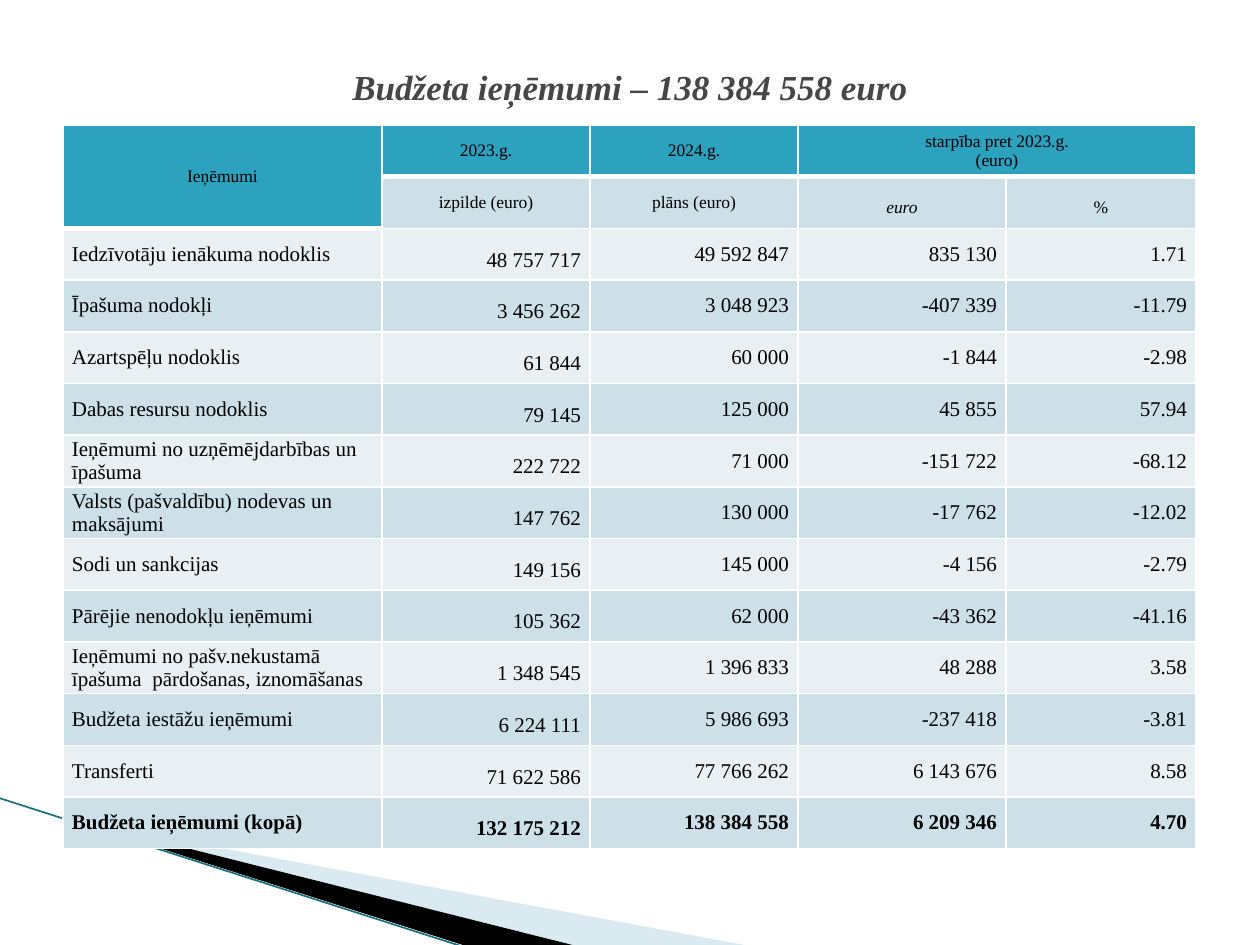
"""Build the municipal budget revenue slide."""
from dataclasses import dataclass

from lxml.etree import SubElement
from pptx import Presentation
from pptx.dml.color import RGBColor
from pptx.enum.shapes import MSO_CONNECTOR
from pptx.enum.text import MSO_ANCHOR, MSO_AUTO_SIZE, PP_ALIGN
from pptx.oxml.ns import qn
from pptx.util import Emu, Pt


@dataclass(frozen=True)
class Theme:
    font: str = "Times New Roman"
    title: str = "464646"
    text: str = "000000"
    header: str = "2DA2BF"
    band_dark: str = "CDE0E8"
    band_light: str = "E8F0F4"
    border: str = "FFFFFF"
    wedge_light: str = "A0CBDC"
    wedge_dark: str = "000000"
    edge: str = "1A6E82"
    title_size: int = 20
    header_size: int = 10
    body_size: int = 12


THEME = Theme()
SCALE = 914400 / 126


def px(length):
    return Emu(round(length * SCALE))


def write(frame, lines, color, align, spacing, font_format):
    frame.text = "\n".join(lines)
    for para in frame.paragraphs:
        para.alignment = align
        para.line_spacing = spacing
        for span in para.runs:
            for name, value in font_format.items():
                setattr(span.font, name, value)
            span.font.color.rgb = RGBColor.from_string(color)


deck = Presentation()
deck.slide_width, deck.slide_height = px(1260), px(945)
page = deck.slides.add_slide(deck.slide_layouts[5])

wedges = [
    (THEME.wedge_light, 40, [(69, 820), (750, 946), (575, 946), (69, 819)]),
    (THEME.wedge_dark, 100, [(67, 818), (576, 946), (469, 947), (68, 819)]),
]
for color, opacity, points in wedges:
    builder = page.shapes.build_freeform(*points[0], scale=SCALE)
    builder.add_line_segments(points[1:], close=True)
    wedge = builder.convert_to_shape()
    wedge.shadow.inherit = False
    wedge.line.fill.background()
    wedge.fill.solid()
    wedge.fill.fore_color.rgb = RGBColor.from_string(color)
    if opacity < 100:
        tint = wedge.fill._xPr.find(qn("a:solidFill"))[0]
        SubElement(tint, qn("a:alpha"), val=str(opacity * 1000))

edge = page.shapes.add_connector(MSO_CONNECTOR.STRAIGHT, px(-1), px(798), px(467), px(948))
edge.line.width = Pt(0.95)
edge.line.color.rgb = RGBColor.from_string(THEME.edge)
SubElement(edge._element.spPr, qn("a:effectLst"))

title = page.shapes.title
title_box = {"left": px(63), "top": px(38), "width": px(1134), "height": px(97)}
for name, value in title_box.items():
    setattr(title, name, value)
title_frame = {"vertical_anchor": MSO_ANCHOR.MIDDLE, "word_wrap": True, "auto_size": MSO_AUTO_SIZE.NONE}
for name, value in title_frame.items():
    setattr(title.text_frame, name, value)
title_font = {"name": THEME.font, "size": Pt(THEME.title_size), "bold": True, "italic": True}
write(title.text_frame, ["Budžeta ieņēmumi – 138 384 558 euro"], THEME.title, PP_ALIGN.CENTER, 1.0, title_font)

rows = [
    ["Ieņēmumi", "2023.g.", "2024.g.", "starpība pret 2023.g.\n(euro)", ""],
    ["", "izpilde (euro)", "plāns (euro)", "euro", "%"],
    ["Iedzīvotāju ienākuma nodoklis", "48 757 717", "49 592 847", "835 130", "1.71"],
    ["Īpašuma nodokļi", "3 456 262", "3 048 923", "-407 339", "-11.79"],
    ["Azartspēļu nodoklis", "61 844", "60 000", "-1 844", "-2.98"],
    ["Dabas resursu nodoklis", "79 145", "125 000", "45 855", "57.94"],
    ["Ieņēmumi no uzņēmējdarbības un īpašuma", "222 722", "71 000", "-151 722", "-68.12"],
    ["Valsts (pašvaldību) nodevas un maksājumi", "147 762", "130 000", "-17 762", "-12.02"],
    ["Sodi un sankcijas", "149 156", "145 000", "-4 156", "-2.79"],
    ["Pārējie nenodokļu ieņēmumi", "105 362", "62 000", "-43 362", "-41.16"],
    ["Ieņēmumi no pašv.nekustamā  īpašuma  pārdošanas, iznomāšanas",
     "1 348 545", "1 396 833", "48 288", "3.58"],
    ["Budžeta iestāžu ieņēmumi", "6 224 111", "5 986 693", "-237 418", "-3.81"],
    ["Transferti", "71 622 586", "77 766 262", "6 143 676", "8.58"],
    ["Budžeta ieņēmumi (kopā)", "132 175 212", "138 384 558", "6 209 346", "4.70"],
]
column_widths = [319, 208, 208, 208, 190]
table = page.shapes.add_table(
    len(rows), len(column_widths), px(63), px(125), px(sum(column_widths)), px(724)
).table
table.first_row = table.horz_banding = False
for column, width in zip(table.columns, column_widths):
    column.width = px(width)
table.cell(0, 0).merge(table.cell(1, 0))
table.cell(0, 3).merge(table.cell(0, 4))

cell_format = {
    "vertical_anchor": MSO_ANCHOR.MIDDLE,
    "margin_left": px(9), "margin_right": px(9), "margin_top": 0, "margin_bottom": 0,
}
for r, values in enumerate(rows):
    for c, value in enumerate(values):
        cell = table.cell(r, c)
        is_header = r < 2
        in_top = r == 0 or (r == 1 and c == 0)
        below_top = (r == 1 and c > 0) or (r == 2 and c == 0)
        for name, setting in cell_format.items():
            setattr(cell, name, setting)
        properties = cell._tc.get_or_add_tcPr()
        borders = {"a:lnL": 1, "a:lnR": 1, "a:lnT": 3 if below_top else 1, "a:lnB": 3 if in_top else 1}
        for tag, points in borders.items():
            border = SubElement(properties, qn(tag), w=str(Pt(points)))
            paint = SubElement(border, qn("a:solidFill"))
            SubElement(paint, qn("a:srgbClr"), val=THEME.border)
        band = THEME.band_dark if r % 2 else THEME.band_light
        cell.fill.solid()
        cell.fill.fore_color.rgb = RGBColor.from_string(THEME.header if in_top else band)
        if cell.is_spanned:
            continue
        align = PP_ALIGN.CENTER if is_header else PP_ALIGN.RIGHT if c else PP_ALIGN.LEFT
        spacing = 1.5 if (r == 1 and c > 2) or (r > 1 and c == 1) else 1.0
        font_format = {
            "name": THEME.font,
            "size": Pt(THEME.header_size if is_header else THEME.body_size),
            "bold": r == len(rows) - 1,
            "italic": value == "euro",
        }
        write(cell.text_frame, value.split("\n"), THEME.text, align, spacing, font_format)

deck.save("out.pptx")
